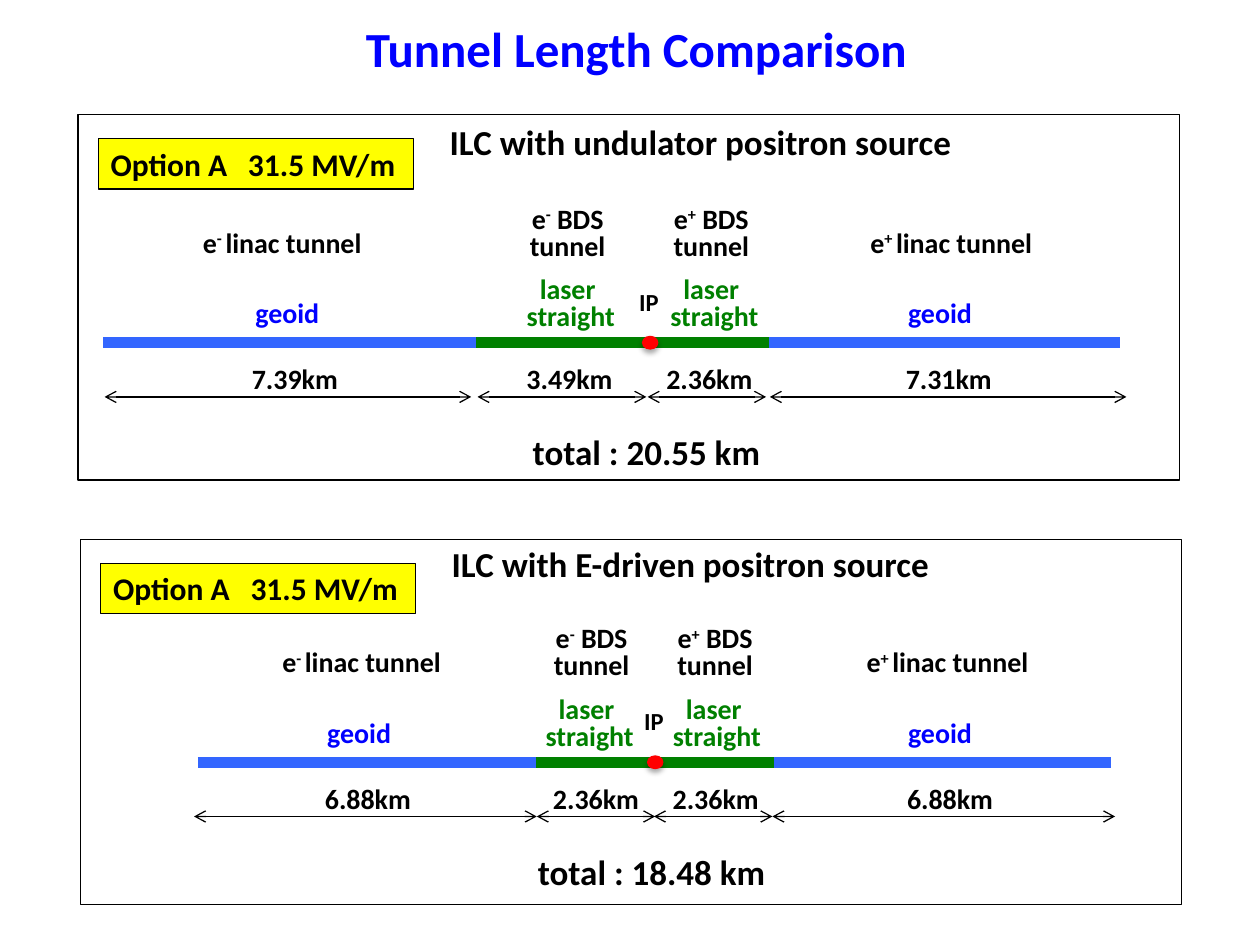
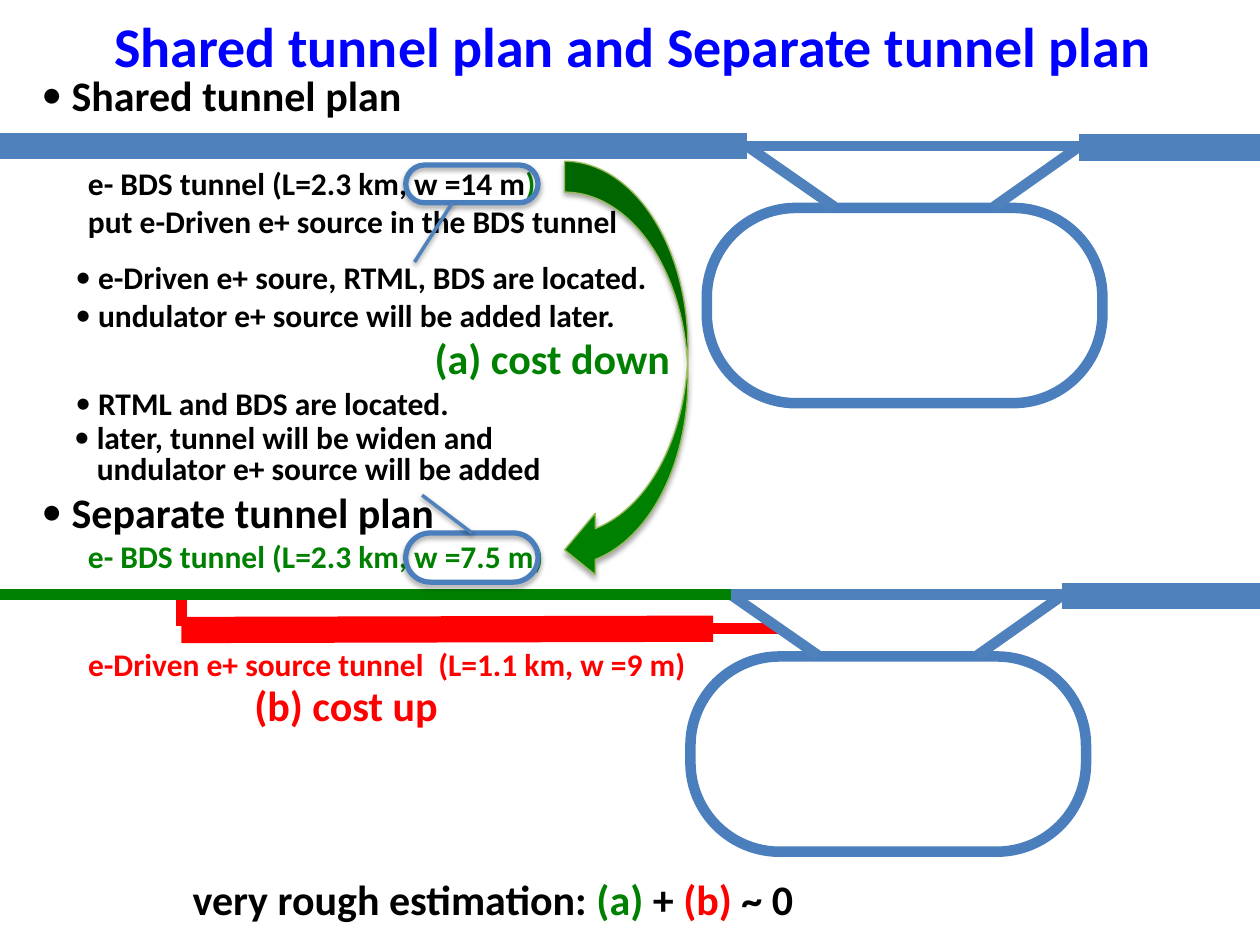
from lxml import etree
from pptx import Presentation
from pptx.dml.color import RGBColor
from pptx.enum.shapes import MSO_CONNECTOR, MSO_SHAPE
from pptx.enum.text import MSO_AUTO_SIZE, PP_ALIGN
from pptx.oxml.ns import qn
from pptx.util import Inches, Pt

STRAIGHT = MSO_CONNECTOR.STRAIGHT
OVAL, RECT = MSO_SHAPE.OVAL, MSO_SHAPE.RECTANGLE
ROUND, CURVED = MSO_SHAPE.ROUNDED_RECTANGLE, MSO_SHAPE.CURVED_LEFT_ARROW
CENTER = PP_ALIGN.CENTER
FIT = MSO_AUTO_SIZE.SHAPE_TO_FIT_TEXT

FONT = "Calibri"
BLACK, BLUE, GREEN, RED = "000000", "0000FF", "008000", "FF0000"
YELLOW, OLIVE = "FFFF00", "9BBB59"
GEOID, STEEL, EDGE = "3366FF", "4F81BD", "4B7EBC"


def color(code):
    return RGBColor.from_string(code)


def sub(parent, tag, **attrs):
    node = etree.SubElement(parent, qn(tag))
    for key, val in attrs.items():
        node.set(key, str(val))
    return node


def shade(effects, alpha, dist):
    """Add a soft shadow that falls straight down."""
    shadow = sub(effects, "a:outerShdw", blurRad=Pt(3.1), dist=Pt(dist),
                 dir=5400000, rotWithShape=0)
    sub(sub(shadow, "a:srgbClr", val=BLACK), "a:alpha", val=alpha * 1000)


def paint(shape, fill, line, width=0.75):
    if fill:
        shape.fill.solid()
        shape.fill.fore_color.rgb = color(fill)
    else:
        shape.fill.background()
    shape.line.color.rgb = color(line)
    shape.line.width = Pt(width)


def draw(slide, kind, x, y, w, h, fill=None, line=BLACK, width=0.75,
         round_by=None, shadow=False):
    shape = slide.shapes.add_shape(kind, Inches(x), Inches(y), Inches(w), Inches(h))
    paint(shape, fill, line, width)
    if round_by is not None:
        shape.adjustments[0] = round_by
    shape.shadow.inherit = False
    if shadow:
        shade(shape.element.spPr.find(qn("a:effectLst")), 35, 1.8)
    return shape


def rule(slide, x1, y1, x2, y2, hue, width, arrows=False, shadow=False):
    line = slide.shapes.add_connector(
        STRAIGHT, Inches(x1), Inches(y1), Inches(x2), Inches(y2))
    line.line.color.rgb = color(hue)
    line.line.width = Pt(width)
    props = line.element.spPr
    if arrows:
        for end in ("a:headEnd", "a:tailEnd"):
            sub(props.find(qn("a:ln")), end, type="arrow")
    effects = sub(props, "a:effectLst")
    if shadow:
        shade(effects, 38, 1.6)
    return line


def text(slide, x, y, w, h, lines, size, hue=BLACK, align=None, space=None,
         wrap=False, hang=0, tab=0):
    """Write lines; each is a string or a list of (text, colour, raised) runs.

    With hang, lines that start with a dot become bullets, others are indented.
    """
    box = slide.shapes.add_textbox(Inches(x), Inches(y), Inches(w), Inches(h))
    frame = box.text_frame
    frame.word_wrap = wrap
    frame.auto_size = FIT
    for i, line in enumerate(lines):
        para = frame.paragraphs[0] if i == 0 else frame.add_paragraph()
        props = para._p.get_or_add_pPr()
        if hang:
            props.set("marL", str(Inches(hang)))
            if line.startswith("• "):
                line = line[2:]
                props.set("indent", str(-Inches(hang)))
                sub(props, "a:buFont", typeface=FONT)
                sub(props, "a:buChar", char="•")
        if tab:
            sub(sub(props, "a:tabLst"), "a:tab", pos=Inches(tab), algn="l")
        font = para.font
        font.name, font.size, font.bold = FONT, Pt(size), True
        font.color.rgb = color(hue)
        if align:
            para.alignment = align
        if space:
            para.line_spacing = space
        for words, tint, raised in [(line, None, False)] if isinstance(line, str) else line:
            run = para.add_run()
            run.text = words
            if tint:
                run.font.color.rgb = color(tint)
            if raised:
                run._r.get_or_add_rPr().set("baseline", "30000")
    return box


def title(slide, x, y, w, h, words, size):
    text(slide, x, y, w, h, [words], size, BLUE, CENTER, wrap=True)


# Slide 1: one framed panel per positron source

def linac(slide, x, y, name_x, tag_x, sign):
    name = [("e", None, False), (sign + " ", None, True), ("linac tunnel", None, False)]
    text(slide, x + name_x, y - 0.93, 1.5, 0.33, [name], 16, align=CENTER, space=0.8)
    text(slide, x + tag_x, y - 0.42, 0.72, 0.37, ["geoid"], 16, BLUE, CENTER)


def bds(slide, x, y, name_x, tag_x, sign):
    name = [("e", None, False), (sign, None, True), (" BDS ", None, False)]
    text(slide, x + name_x, y - 1.12, 0.81, 0.54, [name, "tunnel"], 16,
         align=CENTER, space=0.8)
    text(slide, x + tag_x, y - 0.56, 0.92, 0.54, ["laser ", "straight"], 16,
         GREEN, CENTER, 0.8)


PARTS = [(linac, "-"), (bds, "-"), (bds, "+"), (linac, "+")]


def panel(slide, x, top, axis, head, head_y, head_w, total, geoid, laser, point, spans):
    """Place one layout; lengths are measured from the frame's corner."""
    draw(slide, RECT, x, top, 8.74, 2.9)
    text(slide, x + 2.77, top + head_y, head_w, 0.44, [head], 20, align=CENTER, wrap=True)
    option = text(slide, x + 0.16, top + 0.19, 2.5, 0.4, ["Option A\t31.5 MV/m"], 18,
                  wrap=True, tab=1.09)
    paint(option, YELLOW, BLACK)

    # Beam line and interaction point
    y = top + axis
    for (start, end), hue in ((geoid, GEOID), (laser, GREEN)):
        rule(slide, x + start, y, x + end, y, hue, 6)
    draw(slide, OVAL, x + point, y - 0.05, 0.12, 0.1, RED, RED, shadow=True)
    text(slide, x + point - 0.13, y - 0.45, 0.36, 0.3, ["IP"], 14, align=CENTER, space=0.8)

    # Labels and lengths of the four tunnels
    for (label, sign), (start, end, length, km_x, name_x, tag_x) in zip(PARTS, spans):
        label(slide, x, y, name_x, tag_x, sign)
        rule(slide, x + start, y + 0.43, x + end, y + 0.43, BLACK, 0.75, arrows=True)
        text(slide, x + km_x, y + 0.1, 0.89, 0.37, [length], 16)
    text(slide, x + point - 0.97, y + 0.65, 2.03, 0.44, [total], 20)


def lengths(slide):
    title(slide, 2.66, 0.1, 4.78, 0.57, "Tunnel Length Comparison", 28)
    panel(slide, 0.62, 0.91, 1.81, "ILC with undulator positron source", 0, 4.34,
          "total : 20.55 km", (0.2, 8.27), (3.16, 5.48), 4.48,
          [(0.21, 3.12, "7.39km", 1.28, 0.87, 1.3),
           (3.17, 4.51, "3.49km", 3.46, 3.48, 3.45),
           (4.52, 5.46, "2.36km", 4.57, 4.62, 4.59),
           (5.49, 8.32, "7.31km", 6.47, 6.18, 6.48)])
    panel(slide, 0.64, 4.28, 1.77, "ILC with E-driven positron source", -0.02, 4.14,
          "total : 18.48 km", (0.93, 8.18), (3.61, 5.5), 4.5,
          [(0.9, 3.62, "6.88km", 1.84, 1.48, 1.85),
           (3.62, 4.56, "2.36km", 3.65, 3.65, 3.58),
           (4.55, 5.49, "2.36km", 4.6, 4.63, 4.59),
           (5.49, 8.21, "6.88km", 6.46, 6.13, 6.46)])


# Slide 2: two tunnel plans with the same damping ring

def ring(slide, x, y):
    """Draw the ring, its two legs and the tunnel to the right edge."""
    draw(slide, ROUND, x - 0.32, y + 0.49, 3.14, 1.55, line=EDGE, width=6, round_by=0.457)
    rule(slide, x, y, x + 2.64, y, STEEL, 6)
    rule(slide, x, y, x + 0.69, y + 0.48, STEEL, 6)
    rule(slide, x + 2.64, y, x + 1.96, y + 0.48, STEEL, 6)
    rule(slide, x + 2.63, y + 0.01, 10, y + 0.01, STEEL, 15)


def pill(slide, y, h):
    return draw(slide, ROUND, 3.22, y, 1.05, h, line=EDGE, width=3, round_by=0.5, shadow=True)


def heading(slide, y, words):
    text(slide, 0.23, y, 4.6, 0.5, [words], 24, wrap=True, hang=0.24)


def notes(slide, x, y, lines, space=None):
    text(slide, x, y, 5.2, 0.4, lines, 18, space=space, wrap=True, hang=0.18)


def shared(slide):
    ring(slide, 5.93, 1.16)
    rule(slide, 0, 1.16, 5.93, 1.16, STEEL, 15)
    heading(slide, 0.5, "• Shared tunnel plan")
    text(slide, 0.6, 1.25, 4.6, 0.71,
         [[("e- BDS tunnel (L=2.3 km, w =14 m", None, False), (")", GREEN, False)],
          "put e-Driven e+ source in the BDS tunnel"], 18, wrap=True)
    notes(slide, 0.5, 2, ["• e-Driven e+ soure, RTML, BDS are located.",
                          "• undulator e+ source will be added later."])
    pill(slide, 1.31, 0.3)
    rule(slide, 3.59, 1.61, 3.29, 2.08, STEEL, 2, shadow=True)


def separate(slide):
    # Bypass tunnel for the e-Driven source
    rule(slide, 6.19, 4.99, 5.05, 4.99, RED, 6)
    ring(slide, 5.8, 4.72)
    rule(slide, 5.66, 4.99, 1.44, 5, RED, 15)
    rule(slide, 1.44, 4.73, 1.44, 4.97, RED, 6)
    rule(slide, 0, 4.72, 5.8, 4.72, GREEN, 6)

    notes(slide, 0.5, 3, ["• RTML and BDS are located."])
    notes(slide, 0.49, 3.33, ["• later, tunnel will be widen and",
                              "undulator e+ source will be added"], 0.8)
    heading(slide, 3.81, "• Separate tunnel plan")
    text(slide, 0.6, 4.21, 3.86, 0.4, ["e- BDS tunnel (L=2.3 km, w =7.5 m)"], 18, GREEN)
    text(slide, 0.6, 5.07, 5.19, 0.4, ["e-Driven e+ source tunnel\t(L=1.1 km, w =9 m)"],
         18, RED, wrap=True, tab=2.78)
    width = pill(slide, 4.23, 0.39)
    rule(slide, 3.35, 3.93, 3.75, 4.23, STEEL, 2, shadow=True).end_connect(width, 0)


def costs(slide):
    draw(slide, CURVED, 4.48, 1.28, 0.98, 3.33, GREEN, OLIVE, shadow=True)
    text(slide, 3.35, 2.59, 2.58, 0.5, ["(a) cost down"], 24, GREEN, wrap=True)
    text(slide, 1.92, 5.34, 2.58, 0.5, ["(b) cost up"], 24, RED, wrap=True)
    text(slide, 1.43, 6.88, 6.62, 0.5,
         [[("very rough estimation:", None, False), (" (a) ", GREEN, False),
           ("+ ", None, False), ("(b) ", RED, False), ("~ 0", None, False)]],
         24, wrap=True)


def plans(slide):
    title(slide, 0.26, 0.04, 9.53, 0.64, "Shared tunnel plan and Separate tunnel plan", 32)
    shared(slide)
    separate(slide)
    costs(slide)


def main():
    deck = Presentation()
    deck.slide_width, deck.slide_height = Inches(10), Inches(7.5)
    for build in (lengths, plans):
        build(deck.slides.add_slide(deck.slide_layouts[6]))
    deck.save("out.pptx")


if __name__ == "__main__":
    main()
